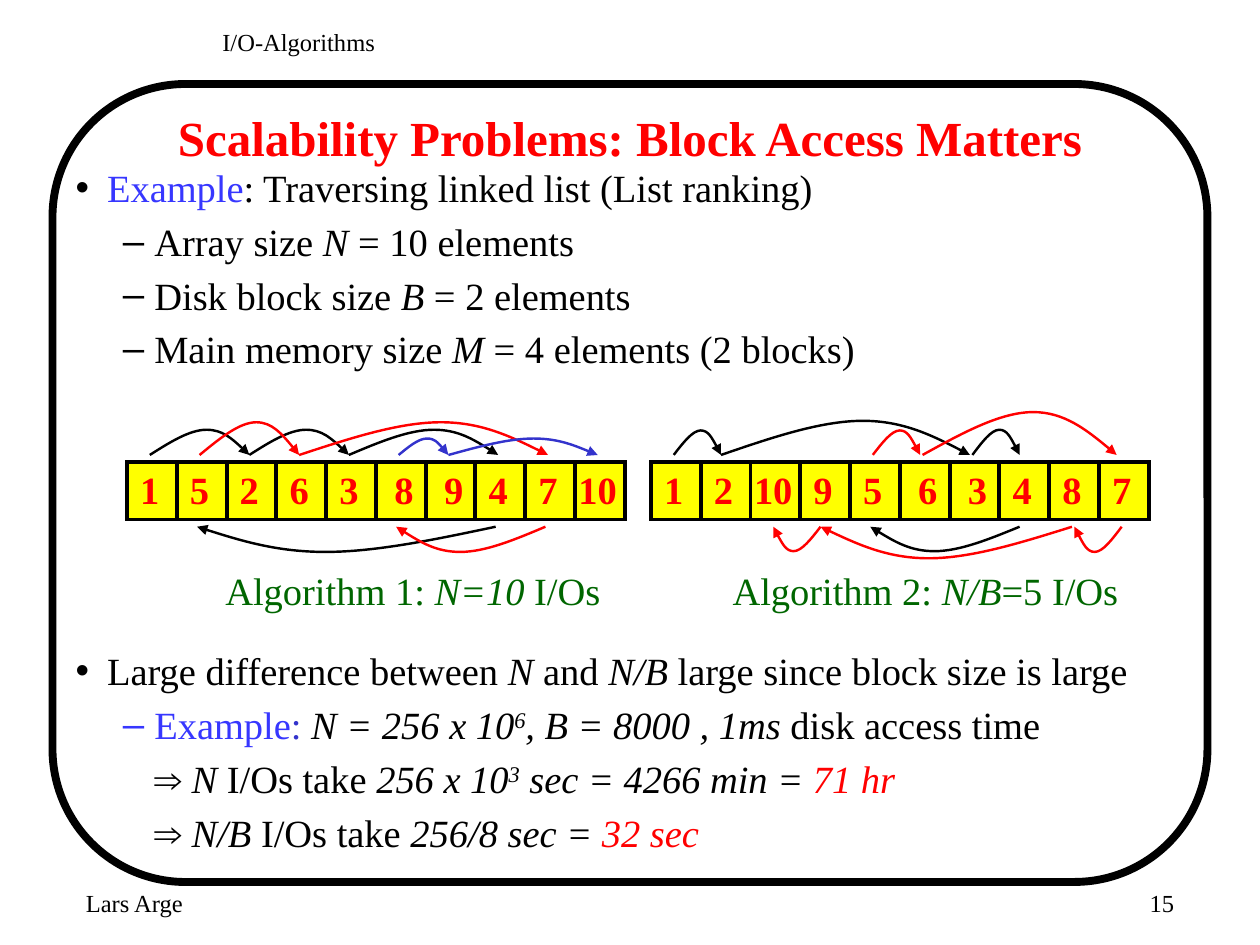
"""Builds the slide on block access in linked list traversal."""
from lxml import etree
from pptx import Presentation
from pptx import util as u
from pptx.dml.color import RGBColor
from pptx.enum import shapes, text
from pptx.oxml.ns import qn

FONT = "Times New Roman"
BLACK, RED, BLUE, INDIGO = "000000", "FF0000", "3737FF", "3333CC"
GREEN, YELLOW = "006600", "FFFF00"

TITLE = "Scalability Problems: Block Access Matters"
# bullet, left margin, hanging indent, space before, runs of (text, colour, style)
BODY = [
    ("•", 18, 18, 2, [("Example", BLUE, ""), (": Traversing linked list (List ranking)", BLACK, "")]),
    ("–", 45, 18, 4.4, [("Array size ", BLACK, ""), ("N", BLACK, "i"), (" = 10 elements", BLACK, "")]),
    ("–", 45, 18, 4.4, [("Disk block size ", BLACK, ""), ("B", BLACK, "i"), (" = 2 elements", BLACK, "")]),
    ("–", 45, 18, 4.4, [("Main memory size ", BLACK, ""), ("M", BLACK, "i"),
                        (" = 4 elements (2 blocks)", BLACK, "")]),
    ("•", 18, 18, 157.6, [("Large difference between ", BLACK, ""), ("N", BLACK, "i"), (" and ", BLACK, ""),
                          ("N/B", BLACK, "i"), (" large since block size is large", BLACK, "")]),
    ("–", 45, 18, 4.4, [("Example", BLUE, ""), (":", INDIGO, ""), (" N = 256 x 10", BLACK, "i"),
                        ("6", BLACK, "i^"), (", B = 8000 , 1ms ", BLACK, "i"),
                        ("disk access time", BLACK, "")]),
    (None, 45, 0, 4.4, [("⇒ ", BLACK, ""), ("N ", BLACK, "i"), ("I/Os take", BLACK, ""),
                        (" 256 x 10", BLACK, "i"), ("3", BLACK, "i^"),
                        (" sec = 4266 min = ", BLACK, "i"), ("71 hr", RED, "i")]),
    (None, 45, 0, 4.4, [("⇒ ", BLACK, ""), ("N/B ", BLACK, "i"), ("I/Os take", BLACK, ""),
                        (" 256/8 sec = ", BLACK, "i"), ("32 sec", RED, "i")]),
]
# arcs: from cell, to cell, rise (negative runs below the array), colour
ARRAYS = [
    {"left": 72.6, "values": [1, 5, 2, 6, 3, 8, 9, 4, 7, 10],
     "arcs": [(0, 2, 14.4, BLACK), (2, 4, 14.4, BLACK), (1, 3, 18.7, RED), (4, 7, 14.4, BLACK),
              (3, 8, 18.7, RED), (6.95, 0.95, -14.4, BLACK), (7.95, 4.95, -14.4, RED),
              (5, 6, 9.4, INDIGO), (6, 9, 9.4, INDIGO)]},
    {"left": 372, "values": [1, 2, 10, 9, 5, 6, 3, 4, 8, 7],
     "arcs": [(0, 0.95, 14, BLACK), (4, 4.95, 14, RED), (6, 6.95, 14.4, BLACK),
              (2.95, 2, -14, RED), (9, 8.05, -14.4, RED), (0.95, 5.95, 19.5, BLACK),
              (6.95, 3.95, -14, BLACK), (5, 8.9, 24.5, RED), (8, 2.95, -18, RED)]},
]
LABELS = [
    (92.6, 286.6, [("Algorithm 1: ", GREEN, ""), ("N=10", GREEN, "i"), (" I/Os", GREEN, "")]),
    (410, 237.6, [("Algorithm 2: ", GREEN, ""), ("N/B", GREEN, "i"), ("=5 I/Os", GREEN, "")]),
]
MARGINALS = [("I/O-Algorithms", 120, 12, 474, 30, "LEFT"), ("Lars Arge", 42, 504, 150, 36, "LEFT"),
             ("15", 528, 504, 150, 36, "RIGHT")]

CELL, TOP, HEIGHT, CENTRE = 28.44, 263.8, 33.1, 13
VALUE_WIDTH = 44
ARC_TOP, ARC_BOTTOM = 260, 301
ARC_SHAPE = [(0.2, 0.5), (0.4, 1), (0.57, 1), (0.73, 1), (0.87, 0.5), (1, 0)]


def rgb(value):
    return RGBColor.from_string(value)


def place(sp, *box):
    sp.left, sp.top, sp.width, sp.height = map(u.Pt, box)


def add_runs(p, runs, size, bold=False):
    for content, color, style in runs:
        r = p.add_run()
        r.text = content
        f = r.font
        f.name, f.size, f.bold, f.italic = FONT, u.Pt(size), bold, "i" in style
        f.color.rgb = rgb(color)
        if "^" in style:
            r._r.get_or_add_rPr().set("baseline", "30000")


def set_bullet(p, bullet, margin, hanging):
    pPr = p._p.get_or_add_pPr()
    pPr.set("marL", str(u.Pt(margin)))
    pPr.set("indent", str(-u.Pt(hanging)))
    if bullet == "•":
        clr = etree.SubElement(pPr, qn("a:buClr"))
        etree.SubElement(clr, qn("a:srgbClr"), val=BLACK)
    if bullet:
        etree.SubElement(pPr, qn("a:buChar"), char=bullet)
    else:
        etree.SubElement(pPr, qn("a:buNone"))


def add_text(s, runs, box, size, align="CENTER", bold=False, before=0, wrap=False):
    sp = s.shapes.add_textbox(*map(u.Pt, box))
    tf = sp.text_frame
    tf.word_wrap = wrap
    if not wrap:
        tf.auto_size = text.MSO_AUTO_SIZE.SHAPE_TO_FIT_TEXT
    p = tf.paragraphs[0]
    p.alignment, p.space_before = text.PP_ALIGN[align], u.Pt(before)
    add_runs(p, runs, size, bold)


def style_outline(sp, color, width, fill=None):
    sp.shadow.inherit = False
    sp.line.color.rgb, sp.line.width = rgb(color), u.Pt(width)
    etree.SubElement(sp.line._get_or_add_ln(), qn("a:miter"), lim="800000")
    if fill:
        sp.fill.solid()
        sp.fill.fore_color.rgb = rgb(fill)
    else:
        sp.fill.background()


def add_box(s, kind, box, width, fill=None):
    sp = s.shapes.add_shape(kind, *map(u.Pt, box))
    style_outline(sp, BLACK, width, fill)
    return sp


def add_arc(s, x0, x1, rise, color):
    y = ARC_TOP if rise > 0 else ARC_BOTTOM
    points = [(u.Pt(x0 + (x1 - x0) * fx), u.Pt(y - rise * fy)) for fx, fy in ARC_SHAPE]
    builder = s.shapes.build_freeform(u.Pt(x0), u.Pt(y))
    builder.add_line_segments(points, close=False)
    sp = builder.convert_to_shape()
    style_outline(sp, color, 1.38)
    lines = list(sp._element.iter(qn("a:lnTo")))
    for i in range(0, len(lines), 3):
        curve = etree.Element(qn("a:cubicBezTo"))
        lines[i].addprevious(curve)
        for line in lines[i:i + 3]:
            curve.append(line[0])
            line.getparent().remove(line)
    etree.SubElement(sp.line._get_or_add_ln(), qn("a:tailEnd"), type="triangle")


def add_array(s, left, values, arcs):
    rect = shapes.MSO_SHAPE.RECTANGLE
    blocks = [add_box(s, rect, (left + i * CELL, TOP, 2 * CELL, HEIGHT), 1.38, YELLOW)
              for i in range(0, len(values), 2)]
    add_box(s, rect, (left, TOP, len(values) * CELL, HEIGHT), 2.25)
    for i in range(1, len(values)):
        x = left + i * CELL
        line = s.shapes.add_connector(shapes.MSO_CONNECTOR.STRAIGHT,
                                      *map(u.Pt, (x, TOP, x, TOP + HEIGHT)))
        if i % 2:
            line.begin_connect(blocks[i // 2], 0)
            line.end_connect(blocks[i // 2], 2)
        line.line.color.rgb, line.line.width = rgb(BLACK), u.Pt(2.25)
        etree.SubElement(line._element.spPr, qn("a:effectLst"))
    for i, value in enumerate(values):
        nudge = 3 if i in (5, 6) else 0
        x = left + i * CELL + CENTRE + nudge - VALUE_WIDTH / 2
        add_text(s, [(str(value), RED, "")], (x, TOP - 1, VALUE_WIDTH, 33.8), 22, bold=True, before=2)
    for start, end, rise, color in arcs:
        add_arc(s, left + CENTRE + start * CELL, left + CENTRE + end * CELL, rise, color)


def main():
    prs = Presentation()
    prs.slide_width, prs.slide_height = u.Pt(720), u.Pt(540)
    s = prs.slides.add_slide(prs.slide_layouts[1])
    add_box(s, shapes.MSO_SHAPE.FLOWCHART_ALTERNATE_PROCESS, (30, 48, 660, 456), 4.5)

    title, body = s.placeholders
    place(title, 54, 54, 612, 48)
    tf = title.text_frame
    tf.auto_size, tf.vertical_anchor = text.MSO_AUTO_SIZE.NONE, text.MSO_ANCHOR.MIDDLE
    tf.paragraphs[0].alignment = text.PP_ALIGN.CENTER
    add_runs(tf.paragraphs[0], [(TITLE, RED, "")], 28, bold=True)

    place(body, 36, 90, 636, 440.6)
    tf = body.text_frame
    tf.auto_size = text.MSO_AUTO_SIZE.NONE
    for i, (bullet, margin, hanging, before, runs) in enumerate(BODY):
        p = tf.add_paragraph() if i else tf.paragraphs[0]
        p.level = 0 if bullet == "•" else 1
        p.space_before = u.Pt(before)
        set_bullet(p, bullet, margin, hanging)
        add_runs(p, runs, 22)

    for array in ARRAYS:
        add_array(s, **array)
    for left, width, runs in LABELS:
        add_text(s, runs, (left, 320.4, width, 33.8), 22, before=2)
    for content, left, top, width, height, align in MARGINALS:
        add_text(s, [(content, BLACK, "")], (left, top, width, height), 14, align, wrap=True)
    prs.save("out.pptx")


if __name__ == "__main__":
    main()
